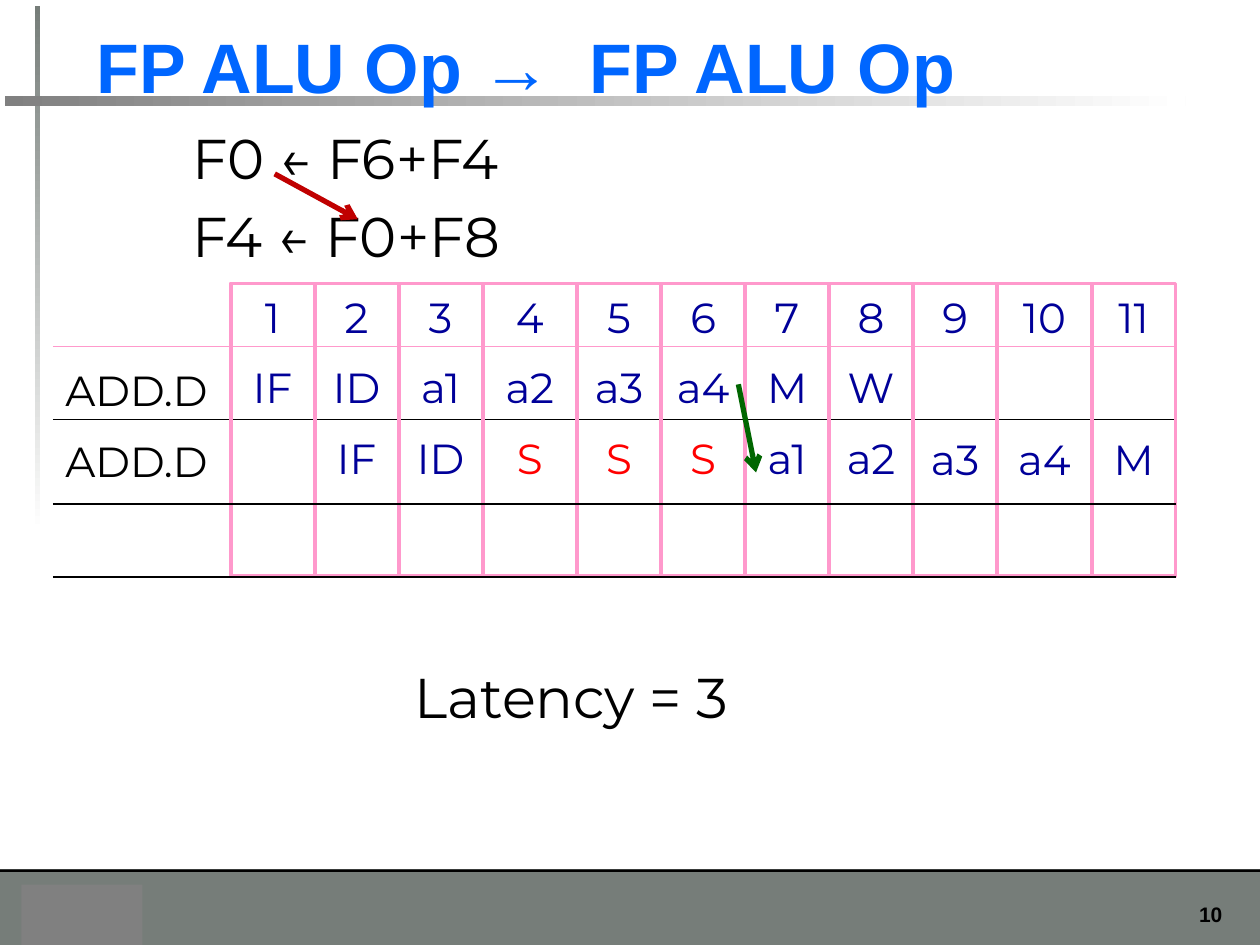
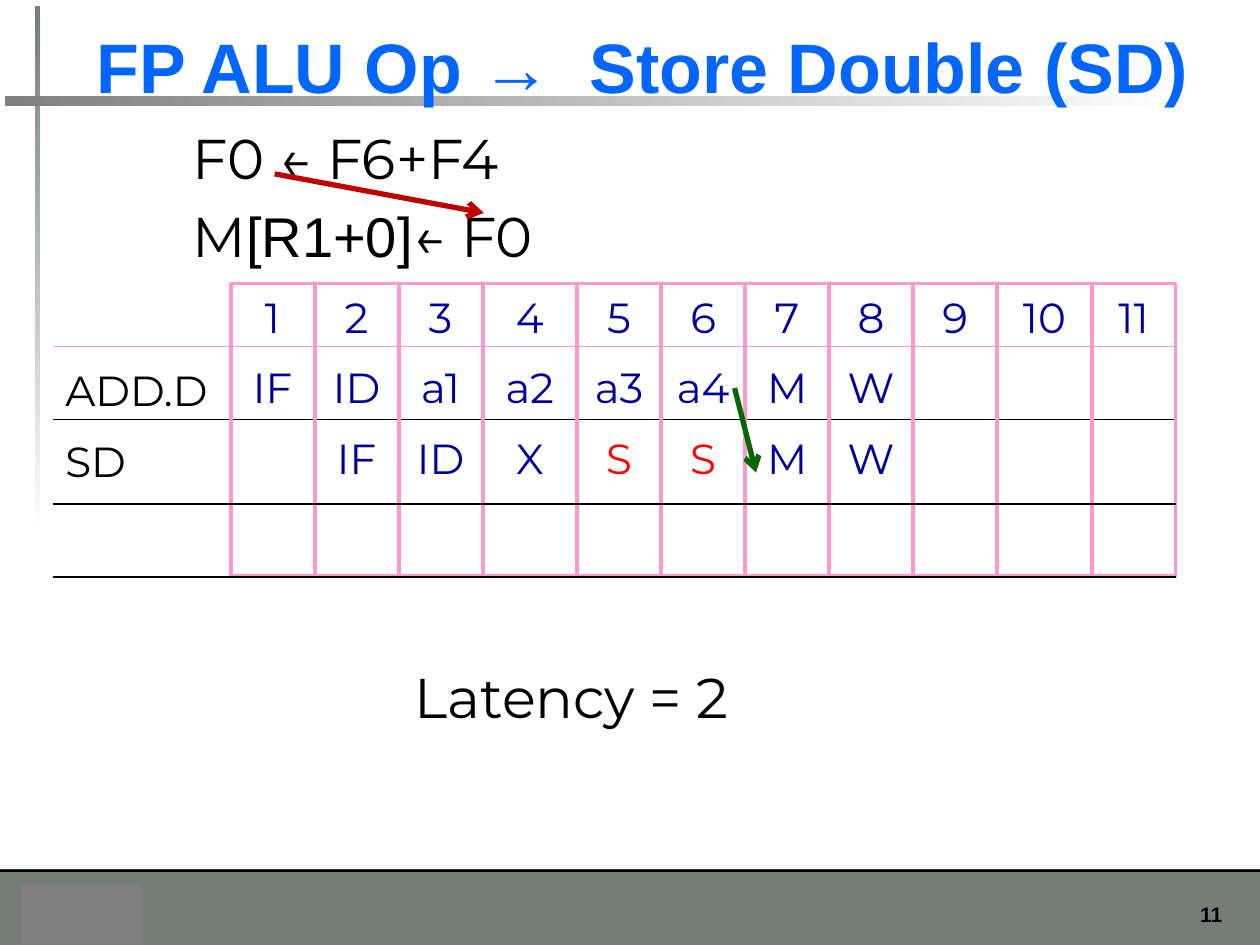
from lxml.etree import SubElement
from pptx import Presentation
from pptx.dml.color import RGBColor
from pptx.enum.shapes import MSO_CONNECTOR, MSO_SHAPE
from pptx.enum.text import MSO_ANCHOR, PP_ALIGN
from pptx.oxml.ns import qn
from pptx.util import Inches, Pt

HEAD, BODY = "Arial", "Montserrat"
BLACK, WHITE, TITLE = "000000", "FFFFFF", "0066FF"
BAND, GREY = "767D79", "808080"
PINK, NAVY, STALL = "FF99CC", "000099", "FF0000"
HAZARD, FORWARD = "C00000", "006600"

W, H = 10, 7.5
FOOT = 0.92 * H
LEFT, TOP, GRID_LEFT, GRID_H = 0.42, 2.25, 1.83, 2.32
WIDTHS = [0.75 if n in (4, 10) else 2 / 3 for n in range(1, 12)]
RIGHT = GRID_LEFT + sum(WIDTHS)
ROW_GAP, ROW_PITCH = 11.7, 41
TEXT_INSET = 0.06

SLIDES = [
    dict(
        number=10,
        title="FP ALU Op →  FP ALU Op",
        code=["F0 ← F6+F4", "F4 ← F0+F8"],
        pipeline=[("ADD.D", 1, "IF ID a1 a2 a3 a4 M W"),
                  ("ADD.D", 2, "IF ID S S S a1 a2 a3 a4 M")],
        hazard=(2.18, 1.38, 2.84, 1.74),
        forward=(5.86, 3.05, 6, 3.75),
        latency="Latency = 3",
    ),
    dict(
        number=11,
        title="FP ALU Op →  Store Double (SD)",
        code=["F0 ← F6+F4", [("M", BODY), ("[R1+0]", HEAD), ("← F0", BODY)]],
        pipeline=[("ADD.D", 1, "IF ID a1 a2 a3 a4 M W"),
                  ("SD", 2, "IF ID X S S M W")],
        hazard=(2.18, 1.38, 3.84, 1.69),
        forward=(5.83, 3.08, 6, 3.75),
        latency="Latency = 2",
    ),
]


def rgb(color):
    return RGBColor.from_string(color)


def write(tf, paragraphs, font=BODY, size=24, color=BLACK, bold=False,
          align=PP_ALIGN.LEFT, gap=0):
    for i, runs in enumerate(paragraphs):
        p = tf.add_paragraph() if i else tf.paragraphs[0]
        p.alignment = align
        if i and gap:
            p.space_before = Pt(gap)
        for text, face in [(runs, font)] if isinstance(runs, str) else runs:
            r = p.add_run()
            r.text = text
            r.font.name, r.font.size, r.font.bold = face, Pt(size), bold
            r.font.color.rgb = rgb(STALL if text == "S" else color)


def text_box(s, x, y, w, h, paragraphs, anchor=MSO_ANCHOR.TOP, inset=0.05,
             **fmt):
    tf = s.shapes.add_textbox(*map(Inches, (x, y, w, h))).text_frame
    tf.word_wrap = True
    tf.vertical_anchor = anchor
    tf.margin_top = Inches(inset)
    write(tf, paragraphs, **fmt)


def rect(s, x, y, w, h, color=None, fade_angle=None):
    sp = s.shapes.add_shape(MSO_SHAPE.RECTANGLE, *map(Inches, (x, y, w, h)))
    sp.shadow.inherit = False
    sp.line.fill.background()
    if color is None:
        sp.fill.background()
    elif fade_angle is None:
        sp.fill.solid()
        sp.fill.fore_color.rgb = rgb(color)
    else:
        sp.fill.gradient()
        sp.fill.gradient_angle = fade_angle
        for stop, shade in zip(sp.fill.gradient_stops, (color, WHITE)):
            stop.color.rgb = rgb(shade)
    return sp


def line(s, ends, color, width, arrow=False):
    c = s.shapes.add_connector(MSO_CONNECTOR.STRAIGHT, *map(Inches, ends))
    c.line.color.rgb = rgb(color)
    c.line.width = Pt(width)
    spPr = c.element.spPr
    if arrow:
        SubElement(spPr.find(qn("a:ln")), qn("a:tailEnd"), type="arrow")
    SubElement(spPr, qn("a:effectLst"))


def row_line(s, y, color=BLACK):
    line(s, (LEFT, y, RIGHT, y), color, 0.75)


def cycle_column(s, x, w, cycle, pipeline):
    sp = rect(s, x, TOP, w, GRID_H)
    sp.line.color.rgb = rgb(PINK)
    sp.line.width = Pt(2.25)
    tf = sp.text_frame
    tf.vertical_anchor = MSO_ANCHOR.TOP
    tf.margin_left = tf.margin_right = 0
    tf.margin_top = Inches(TEXT_INSET)
    rows, texts = [0], [str(cycle)]
    for row, (_, start, stages) in enumerate(pipeline, 1):
        names = stages.split()
        if 0 <= cycle - start < len(names):
            rows.append(row)
            texts.append(names[cycle - start])
    write(tf, texts, color=NAVY, align=PP_ALIGN.CENTER)
    for p, before, row in zip(tf.paragraphs[1:], rows, rows[1:]):
        p.space_before = Pt(ROW_GAP + (row - before - 1) * ROW_PITCH)


def pipeline_grid(s, pipeline):
    text_box(s, LEFT, 2.83, 1.83, 1.11, [label for label, _, _ in pipeline],
             inset=TEXT_INSET, gap=ROW_GAP)
    row_line(s, 3.33)
    for i, w in enumerate(WIDTHS):
        cycle_column(s, GRID_LEFT + sum(WIDTHS[:i]), w, i + 1, pipeline)
    row_line(s, 4)
    row_line(s, 4.58)
    row_line(s, 2.75, PINK)


def background(s, number):
    rect(s, 0, FOOT, W, H - FOOT, BAND)
    rect(s, 0, FOOT, W, 0.02, BLACK)
    text_box(s, 9.17, 7.11, 0.63, 0.3, [str(number)], font=HEAD, size=12,
             bold=True, align=PP_ALIGN.RIGHT)
    rect(s, 0.28, 0.05, 0.04, 4.17, BAND, fade_angle=270)
    rect(s, 0.04, 0.76, 9.37, 0.08, GREY, fade_angle=0)


def main():
    prs = Presentation()
    prs.slide_width, prs.slide_height = Inches(W), Inches(H)
    for d in SLIDES:
        s = prs.slides.add_slide(prs.slide_layouts[6])
        background(s, d["number"])
        text_box(s, 0.67, 0.13, 9.06, 0.77, [d["title"]], font=HEAD, size=40,
                 color=TITLE, bold=True, anchor=MSO_ANCHOR.BOTTOM)
        pipeline_grid(s, d["pipeline"])
        line(s, d["forward"], FORWARD, 3, arrow=True)
        text_box(s, 3.19, 5.21, 4.23, 0.64, [d["latency"]], size=32)
        text_box(s, 1.43, 0.93, 4.18, 1.29, d["code"], size=32, gap=6)
        line(s, d["hazard"], HAZARD, 3, arrow=True)
        rect(s, 0.17, 7.02, 0.96, 0.48, GREY)
    prs.save("out.pptx")


if __name__ == "__main__":
    main()
